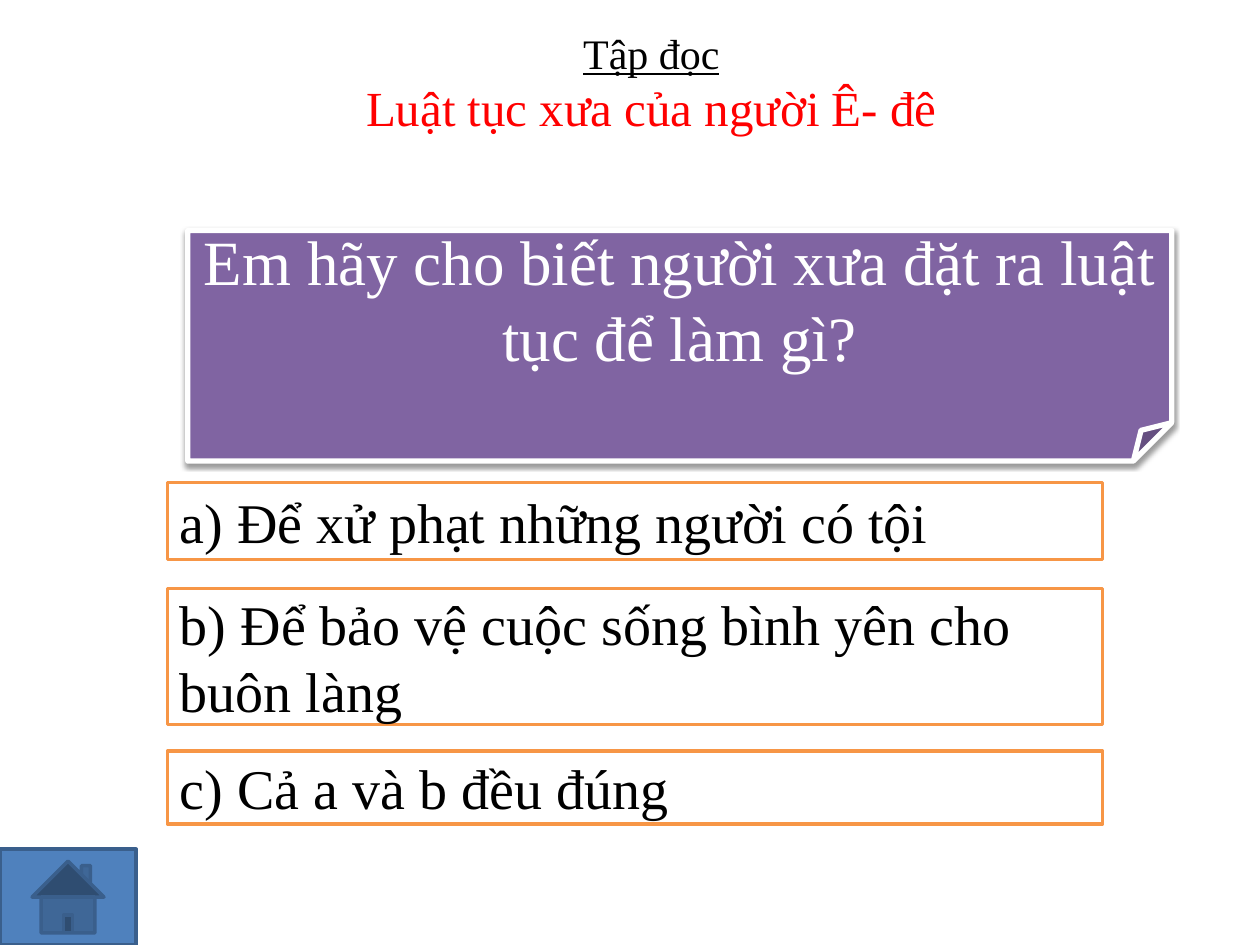
import pptx
import pptx.util
import pptx.oxml
import pptx.dml.color
import pptx.enum.shapes
import pptx.enum.text

Inches, Pt = pptx.util.Inches, pptx.util.Pt
KIND = pptx.enum.shapes.MSO_SHAPE
ALIGN = pptx.enum.text.PP_ALIGN
FONT = "Times New Roman"
HEX = {"black": "000000", "white": "FFFFFF", "red": "FF0000", "purple": "8064A2",
       "orange": "F79646", "blue": "4F81BD", "navy": "3A5F8C"}

# Content: heading lines are text, size, colour, underline
HEADS = [("Tập đọc", 24, "black", True),
         ("Luật tục xưa của người Ê- đê", 28, "red", False)]
ASK = "Em hãy cho biết người xưa đặt ra luật tục để làm gì?"
# Answers are text, top, height
ANSWERS = [("a) Để xử phạt những người có tội", 3.83, 0.61),
           ("b) Để bảo vệ cuộc sống bình yên cho buôn làng", 4.67, 1.08),
           ("c) Cả a và b đều đúng", 5.96, 0.58)]
SHADOW = """<a:effectLst xmlns:a="http://schemas.openxmlformats.org/drawingml/2006/main">
<a:outerShdw blurRad="40000" dist="20000" dir="5400000" rotWithShape="0">
<a:srgbClr val="000000"><a:alpha val="38000"/></a:srgbClr></a:outerShdw></a:effectLst>"""


def tint(name):
    return pptx.dml.color.RGBColor.from_string(HEX[name])


def add_box(slide, kind, box, fill, line, width):
    shape = slide.shapes.add_shape(kind, *map(Inches, box))
    shape.shadow.inherit = False
    shape.fill.solid()
    shape.fill.fore_color.rgb = tint(fill)
    shape.line.color.rgb = tint(line)
    shape.line.width = Pt(width)
    return shape


def write(para, text, size, color, align, under=False):
    para.alignment = align
    run = para.add_run()
    run.text = text
    run.font.name = FONT
    run.font.size = Pt(size)
    run.font.color.rgb = tint(color)
    run.font.underline = under


def main():
    deck = pptx.Presentation()
    deck.slide_width, deck.slide_height = Inches(10), Inches(7.5)
    slide = deck.slides.add_slide(deck.slide_layouts[6])

    # Question note, its text raised by a deep bottom margin
    note = add_box(slide, KIND.FOLDED_CORNER, (1.49, 1.83, 7.81, 1.83),
                   "purple", "white", 3)
    props = note._element.spPr
    props.remove(props.find(pptx.oxml.ns.qn("a:effectLst")))
    props.append(pptx.oxml.parse_xml(SHADOW))
    note.text_frame.margin_bottom = Inches(0.5)
    write(note.text_frame.paragraphs[0], ASK, 36, "white", ALIGN.CENTER)

    # Answers
    for text, top, height in ANSWERS:
        box = add_box(slide, KIND.RECTANGLE, (1.33, top, 7.42, height),
                      "white", "orange", 2)
        write(box.text_frame.paragraphs[0], text, 32, "black", ALIGN.LEFT)

    # Home button
    add_box(slide, KIND.ACTION_BUTTON_HOME, (0, 6.74, 1.08, 0.76), "blue", "navy", 2)

    # Heading
    head = slide.shapes.add_textbox(*map(Inches, (0.67, 0.17, 9, 0.83))).text_frame
    head.word_wrap = True
    for i, (text, size, color, under) in enumerate(HEADS):
        para = head.add_paragraph() if i else head.paragraphs[0]
        write(para, text, size, color, ALIGN.CENTER, under)

    deck.save("out.pptx")


if __name__ == "__main__":
    main()
